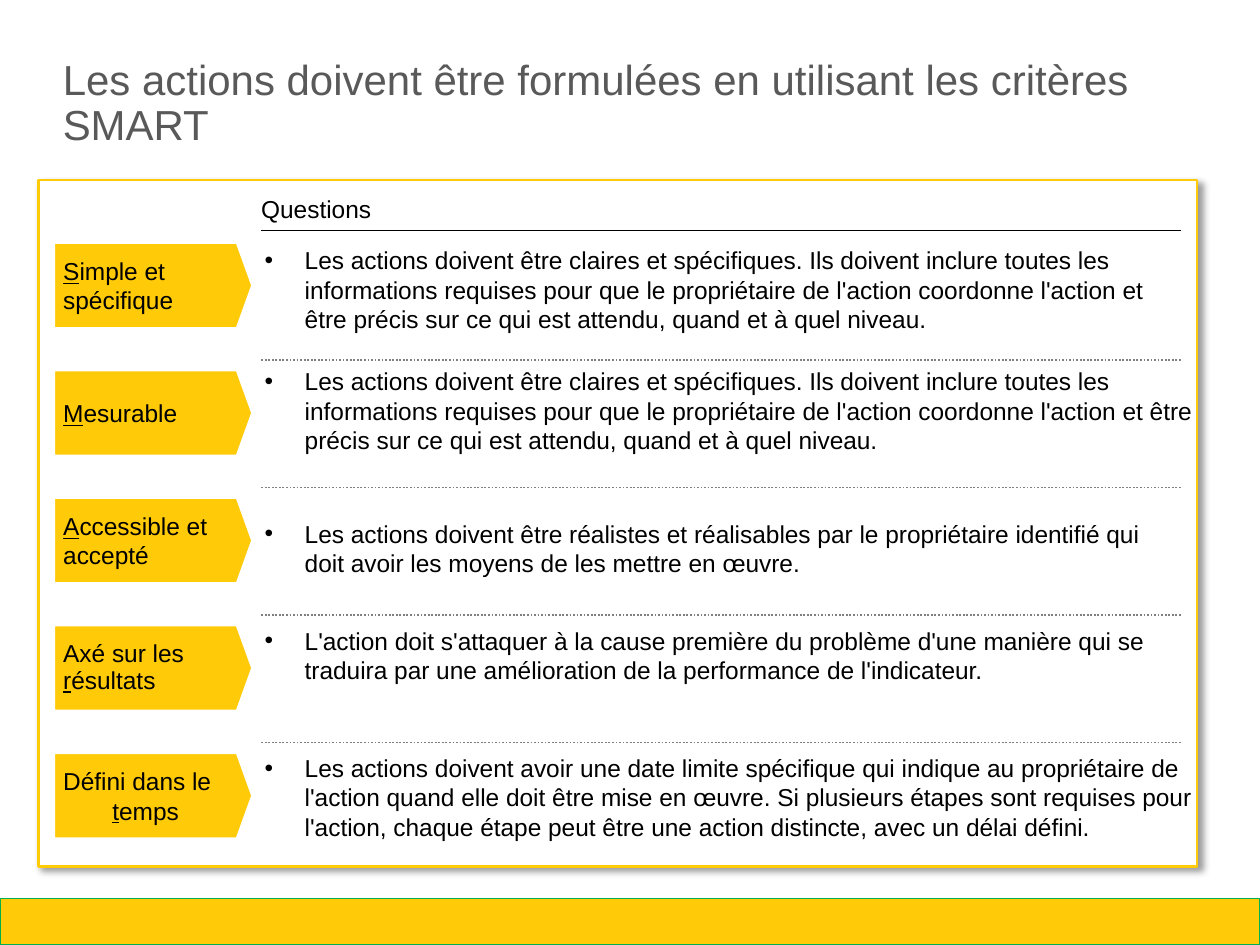
from dataclasses import dataclass

from pptx import Presentation
from pptx.dml.color import RGBColor
from pptx.enum.dml import MSO_LINE
from pptx.enum.shapes import MSO_CONNECTOR, MSO_SHAPE
from pptx.enum.text import MSO_ANCHOR, MSO_AUTO_SIZE, PP_ALIGN
from pptx.oxml import parse_xml
from pptx.oxml.ns import nsdecls
from pptx.util import Cm, Pt


@dataclass(frozen=True)
class Theme:
    font: str = "Arial"
    title_size: float = 23.5
    body_size: float = 13.7
    yellow: str = "FFCA08"
    green: str = "00B050"
    white: str = "FFFFFF"
    black: str = "000000"
    title_gray: str = "595959"
    line_gray: str = "808080"


THEME = Theme()

ROW_TOP = 4.8
ROW_PITCH = 2.52
DIVIDER_TOP = 7.11
RULE_LEFT, RULE_RIGHT = 5.16, 23.32
QUESTION_LEFT = 5.23

CLEAR = (
    "Les actions doivent être claires et spécifiques. Ils doivent inclure toutes les "
    "informations requises pour que le propriétaire de l'action coordonne l'action et "
    "être précis sur ce qui est attendu, quand et à quel niveau."
)
REALISTIC = (
    "Les actions doivent être réalistes et réalisables par le propriétaire identifié qui "
    "doit avoir les moyens de les mettre en œuvre."
)
ROOT_CAUSE = (
    "L'action doit s'attaquer à la cause première du problème d'une manière qui se "
    "traduira par une amélioration de la performance de l'indicateur."
)
DEADLINE = (
    "Les actions doivent avoir une date limite spécifique qui indique au propriétaire de "
    "l'action quand elle doit être mise en œuvre. Si plusieurs étapes sont requises pour "
    "l'action, chaque étape peut être une action distincte, avec un délai défini."
)

# label parts, label line spacing, label hanging indent, question, top offset, width, height
CRITERIA = [
    (("", "S", "imple et spécifique"), 1.0, 0, CLEAR, 0.05, 18.16, 1.75),
    (("", "M", "esurable"), 1.0, 0, CLEAR, -0.08, 18.47, 1.75),
    (("", "A", "ccessible et accepté"), 1.0, 0, REALISTIC, 0.41, 18.16, 1.17),
    (("Axé sur les ", "r", "ésultats"), 0.9, 0, ROOT_CAUSE, 0, 18.16, 1.17),
    (("Défini dans le ", "t", "emps"), 1.0, 0.97, DEADLINE, 0, 18.49, 1.75),
]


def apply(obj, formats):
    for name, value in formats.items():
        setattr(obj, name, value)


def add_run(p, text, size=THEME.body_size, color=THEME.black, underline=None):
    r = p.add_run()
    r.text = text
    apply(r.font, {"name": THEME.font, "size": Pt(size), "underline": underline})
    r.font.color.rgb = RGBColor.from_string(color)


def format_frame(tf, anchor=MSO_ANCHOR.TOP, left=0, right=0):
    apply(tf, {
        "word_wrap": True,
        "auto_size": MSO_AUTO_SIZE.NONE,
        "vertical_anchor": anchor,
        "margin_left": Cm(left),
        "margin_right": Cm(right),
        "margin_top": 0,
        "margin_bottom": 0,
    })


def set_hanging(p, indent):
    pPr = p._p.get_or_add_pPr()
    pPr.set("marL", str(Cm(indent)))
    pPr.set("indent", str(-Cm(indent)))
    return pPr


def add_box(slide, preset, x, y, w, h, fill, line, width):
    sp = slide.shapes.add_shape(preset, Cm(x), Cm(y), Cm(w), Cm(h))
    sp.shadow.inherit = False
    sp.fill.solid()
    sp.fill.fore_color.rgb = RGBColor.from_string(fill)
    sp.line.color.rgb = RGBColor.from_string(line)
    sp.line.width = Pt(width)
    return sp


def add_panel(slide):
    sp = add_box(slide, MSO_SHAPE.RECTANGLE, 0.76, 3.56, 22.89, 13.56,
                 THEME.white, THEME.yellow, 1.5)
    sp._element.spPr.effectLst.append(parse_xml(
        f'<a:outerShdw {nsdecls("a")} blurRad="{Pt(4)}" dist="{Pt(3)}" dir="2700000">'
        f'<a:srgbClr val="{THEME.black}"><a:alpha val="40000"/></a:srgbClr></a:outerShdw>'
    ))


def add_rule(slide, y, color, width, dash=None):
    line = slide.shapes.add_connector(
        MSO_CONNECTOR.STRAIGHT, Cm(RULE_LEFT), Cm(y), Cm(RULE_RIGHT), Cm(y))
    line.line.color.rgb = RGBColor.from_string(color)
    apply(line.line, {"width": Pt(width), "dash_style": dash})
    line._element.spPr.append(parse_xml(f'<a:effectLst {nsdecls("a")}/>'))


def add_label(slide, y, parts, spacing, hanging):
    sp = add_box(slide, MSO_SHAPE.PENTAGON, 1.07, y, 3.91, 1.68,
                 THEME.yellow, THEME.white, 1)
    sp.adjustments[0] = 0.18
    tf = sp.text_frame
    format_frame(tf, MSO_ANCHOR.MIDDLE, left=0.18, right=0.15)
    p = tf.paragraphs[0]
    apply(p, {"alignment": PP_ALIGN.LEFT, "line_spacing": spacing})
    if hanging:
        set_hanging(p, hanging)
    before, initial, after = parts
    if before:
        add_run(p, before)
    add_run(p, initial, underline=True)
    add_run(p, after)


def add_text(slide, x, y, w, h, text, anchor=MSO_ANCHOR.TOP, bullet=False):
    tf = slide.shapes.add_textbox(Cm(x), Cm(y), Cm(w), Cm(h)).text_frame
    format_frame(tf, anchor)
    p = tf.paragraphs[0]
    if bullet:
        pPr = set_hanging(p, 0.79)
        pPr.append(parse_xml(f'<a:buFont {nsdecls("a")} typeface="{THEME.font}"/>'))
        pPr.append(parse_xml(f'<a:buChar {nsdecls("a")} char="•"/>'))
    add_run(p, text)


def set_title(slide, text):
    sp = slide.shapes.title
    apply(sp, {"left": Cm(1.24), "top": Cm(1.17), "width": Cm(22.4), "height": Cm(1.8)})
    format_frame(sp.text_frame)
    p = sp.text_frame.paragraphs[0]
    apply(p, {"alignment": PP_ALIGN.LEFT, "line_spacing": 0.9})
    add_run(p, text, THEME.title_size, THEME.title_gray)


def main():
    prs = Presentation()
    apply(prs, {"slide_width": Cm(24.89), "slide_height": Cm(18.67)})
    slide = prs.slides.add_slide(prs.slide_layouts[5])

    add_box(slide, MSO_SHAPE.RECTANGLE, 0, 17.75, 24.89, 0.92,
            THEME.yellow, THEME.green, 0.75)
    set_title(slide, "Les actions doivent être formulées en utilisant les critères SMART")
    add_panel(slide)
    add_text(slide, RULE_LEFT, 3.66, 18.16, 0.76, "Questions", MSO_ANCHOR.BOTTOM)
    add_rule(slide, 4.55, THEME.black, 0.75)

    for i, (parts, spacing, hanging, question, offset, w, h) in enumerate(CRITERIA):
        y = ROW_TOP + i * ROW_PITCH
        add_label(slide, y, parts, spacing, hanging)
        add_text(slide, QUESTION_LEFT, y + offset, w, h, question, bullet=True)

    for i in range(len(CRITERIA) - 1):
        add_rule(slide, DIVIDER_TOP + i * ROW_PITCH, THEME.line_gray, 1, MSO_LINE.ROUND_DOT)

    prs.save("out.pptx")


if __name__ == "__main__":
    main()
